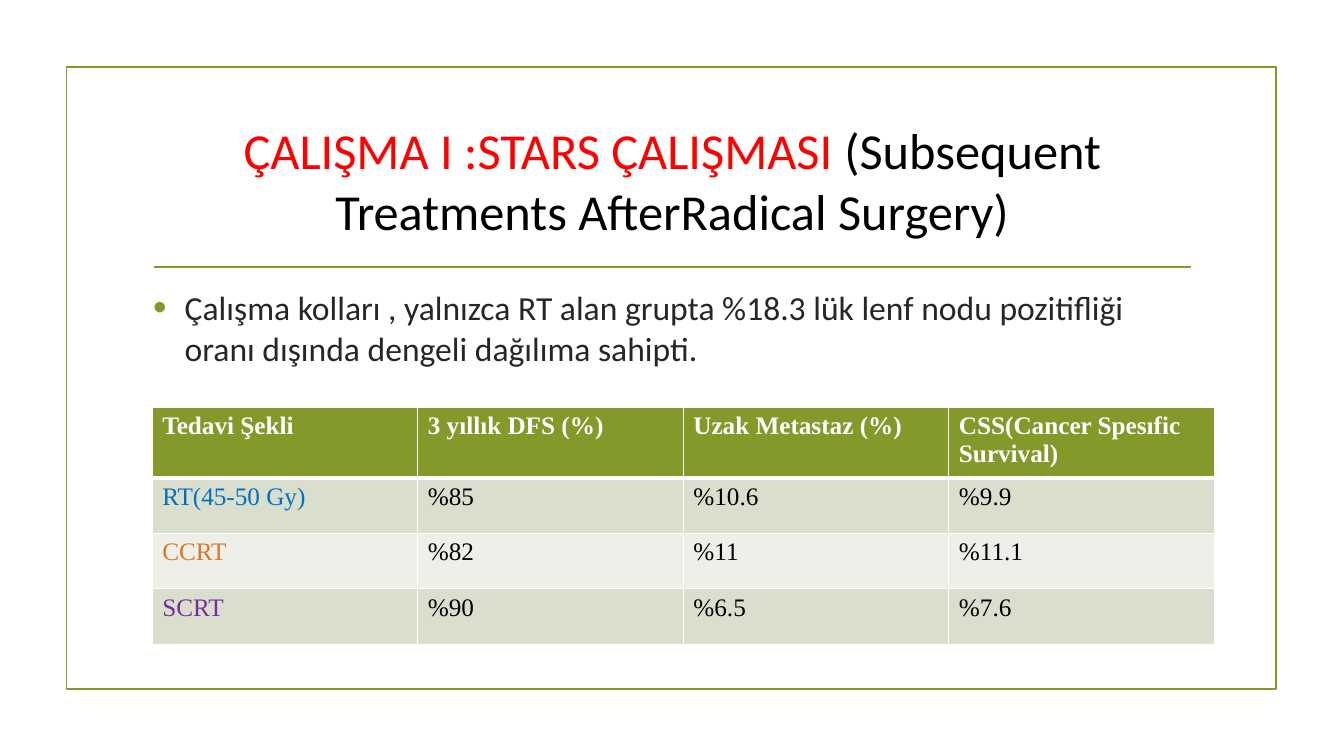
"""Build the STARS trial results slide."""
from lxml.etree import SubElement
from pptx import Presentation
from pptx.dml.color import RGBColor
from pptx.enum.shapes import MSO_CONNECTOR, MSO_SHAPE
from pptx.enum.text import MSO_ANCHOR, MSO_AUTO_SIZE, PP_ALIGN
from pptx.oxml.ns import qn
from pptx.util import Pt

GREEN = RGBColor(0x83, 0x99, 0x2A)
RED = RGBColor(0xFF, 0x00, 0x00)
BLACK = RGBColor(0x00, 0x00, 0x00)
WHITE = RGBColor(0xFF, 0xFF, 0xFF)
GREY = RGBColor(0x26, 0x26, 0x26)
BLUE = RGBColor(0x00, 0x70, 0xC0)
ORANGE = RGBColor(0xD9, 0x78, 0x28)
PURPLE = RGBColor(0x70, 0x30, 0xA0)
DARK = RGBColor(0xD9, 0xDE, 0xCD)
LIGHT = RGBColor(0xED, 0xEF, 0xE8)

TITLE = [
    ("ÇALIŞMA I :STARS ÇALIŞMASI ", RED),
    ("(Subsequent Treatments AfterRadical Surgery)", BLACK),
]
BODY = [("Çalışma kolları , yalnızca RT alan grupta %18.3 lük lenf nodu "
         "pozitifliği oranı dışında dengeli dağılıma sahipti.", GREY)]
ROWS = [
    ("Tedavi Şekli", "3 yıllık DFS (%)", "Uzak Metastaz (%)",
     "CSS(Cancer Spesıfic Survival)"),
    ("RT(45-50 Gy)", "%85", "%10.6", "%9.9"),
    ("CCRT", "%82", "%11", "%11.1"),
    ("SCRT", "%90", "%6.5", "%7.6"),
]
ARMS = [WHITE, BLUE, ORANGE, PURPLE]
FILLS = [GREEN, DARK, LIGHT, DARK]
HEAD, ROW, COL = 50.4, 39.6, 189.72


def place(shape, left, top, width, height):
    """Move and size a shape in points."""
    shape.left, shape.top = Pt(left), Pt(top)
    shape.width, shape.height = Pt(width), Pt(height)


def write(para, runs, size, face, bold=False):
    """Add coloured runs to a paragraph."""
    for text, color in runs:
        run = para.add_run()
        run.text = text
        font = run.font
        font.size, font.name, font.bold = Pt(size), face, bold
        font.color.rgb = color


def bullet(para):
    """Give a paragraph a green hanging bullet."""
    props = para._p.get_or_add_pPr()
    props.set("marL", str(Pt(22.5)))
    props.set("indent", str(Pt(-22.5)))
    color = SubElement(props, qn("a:buClr"))
    SubElement(color, qn("a:srgbClr"), val=str(GREEN))
    SubElement(props, qn("a:buSzPct"), val="115000")
    SubElement(props, qn("a:buFont"), typeface="Arial")
    SubElement(props, qn("a:buChar"), char="•")


def edge(cell, side, width):
    """Draw one white cell border."""
    props = cell._tc.get_or_add_tcPr()
    line = SubElement(props, qn("a:ln" + side), w=str(Pt(width)))
    fill = SubElement(line, qn("a:solidFill"))
    SubElement(fill, qn("a:srgbClr"), val=str(WHITE))


def add_frame(shapes):
    """Add the green frame and the rule below the title."""
    frame = shapes.add_shape(
        MSO_SHAPE.RECTANGLE, Pt(47.5), Pt(48), Pt(864), Pt(444))
    frame.shadow.inherit = False
    frame.fill.background()
    rule = shapes.add_connector(
        MSO_CONNECTOR.STRAIGHT, Pt(110), Pt(190.8), Pt(850.5), Pt(190.8))
    SubElement(rule._element.spPr, qn("a:effectLst"))
    for shape in (frame, rule):
        shape.line.color.rgb = GREEN
        shape.line.width = Pt(1.25)


def add_text(shapes):
    """Fill the title and body placeholders."""
    title, body = shapes.title, shapes.placeholders[1]
    place(title, 102.25, 77, 756, 103)
    place(body, 102.25, 201.6, 756, 261.4)
    for shape, anchor in ((title, MSO_ANCHOR.MIDDLE), (body, MSO_ANCHOR.TOP)):
        frame = shape.text_frame
        frame.word_wrap = True
        frame.auto_size = MSO_AUTO_SIZE.NONE
        frame.vertical_anchor = anchor
    head = title.text_frame.paragraphs[0]
    head.alignment = PP_ALIGN.CENTER
    write(head, TITLE, 36, "Calibri")
    point = body.text_frame.paragraphs[0]
    bullet(point)
    point.space_before, point.space_after = Pt(0), Pt(6)
    write(point, BODY, 24, "Calibri")


def add_grid(shapes):
    """Add the table of results by treatment arm."""
    count, wide = len(ROWS), len(ROWS[0])
    table = shapes.add_table(
        count, wide, Pt(108.72), Pt(290.9), Pt(COL * wide),
        Pt(HEAD + ROW * (count - 1))).table
    for col in table.columns:
        col.width = Pt(COL)
    for r, texts in enumerate(ROWS):
        table.rows[r].height = Pt(ROW if r else HEAD)
        for c, text in enumerate(texts):
            cell = table.cell(r, c)
            for side in "LRTB":
                thick = (r, side) in ((0, "B"), (1, "T"))
                edge(cell, side, 3 if thick else 1)
            cell.fill.solid()
            cell.fill.fore_color.rgb = FILLS[r]
            color = BLACK if r and c else ARMS[r]
            write(cell.text_frame.paragraphs[0], [(text, color)], 18,
                  "Times New Roman", r == 0)


def main():
    """Build and save the slide."""
    deck = Presentation()
    deck.slide_width, deck.slide_height = Pt(960), Pt(540)
    shapes = deck.slides.add_slide(deck.slide_layouts[1]).shapes
    add_frame(shapes)
    add_text(shapes)
    add_grid(shapes)
    deck.save("out.pptx")


if __name__ == "__main__":
    main()
